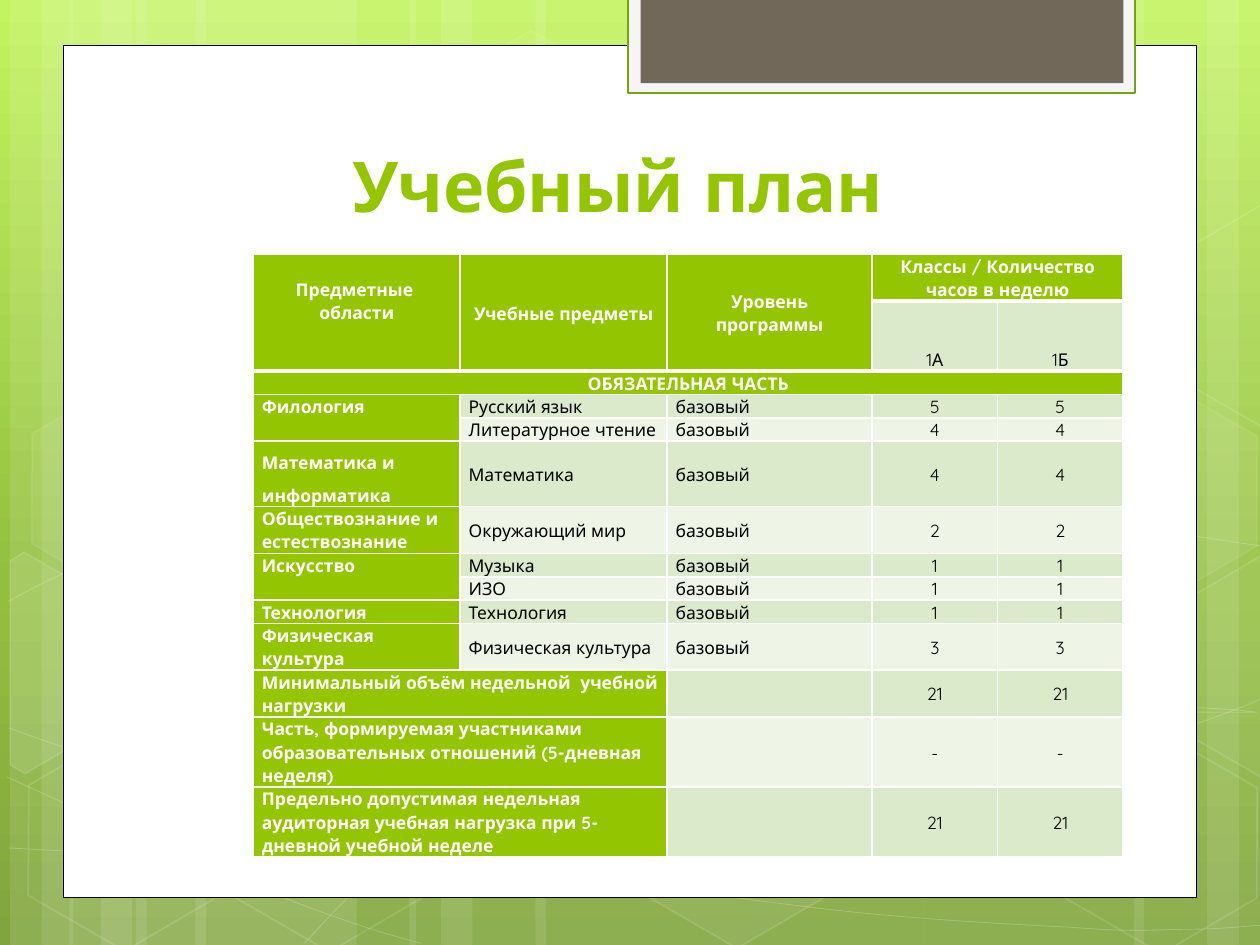
"""Build the curriculum slide: a green backdrop, a title and a table of weekly hours."""
import copy
import math

import lxml.etree
import pptx
import pptx.dml.color
import pptx.enum.shapes
import pptx.enum.text
import pptx.oxml.ns
import pptx.util

Pt = pptx.util.Pt
qn = pptx.oxml.ns.qn
RGB = pptx.dml.color.RGBColor.from_string
SHAPE = pptx.enum.shapes.MSO_SHAPE
ALIGN = pptx.enum.text.PP_ALIGN
ANCHOR = pptx.enum.text.MSO_ANCHOR

THEME = {
    "font": "Quicksand", "title_size": 40, "table_size": 10,
    "white": "FFFFFF", "black": "000000", "accent": "94C600",
    "bands": ["EEF5E7", "DCEACC"],
    "frame": "F5F5F5", "frame_line": "74A510", "tab": "71685A",
    "backdrop": [(0, "C3F35F"), (0.62, "93BF3F"), (1, "81A53E")],
}


def paint(shape, fill=None, fill_alpha=100, line=None, width=1, line_alpha=100):
    """Set fill and line, with opacity in percent."""
    shape.shadow.inherit = False
    for target, color, alpha in ((shape.fill, fill, fill_alpha), (shape.line.fill, line, line_alpha)):
        if color is None or alpha == 0:
            target.background()
            continue
        target.solid()
        target.fore_color.rgb = RGB(color)
        if alpha < 100:
            holder = shape.line._get_or_add_ln() if target is shape.line.fill else shape.element.spPr
            value = holder.find(qn("a:solidFill")).find(qn("a:srgbClr"))
            lxml.etree.SubElement(value, qn("a:alpha"), val=str(alpha * 1000))
    if line:
        shape.line.width = Pt(width)


def write(paragraph, text, alignment, spacing, size, color, bold):
    """Write one formatted run into a paragraph."""
    paragraph.alignment = alignment
    paragraph.line_spacing = spacing
    run = paragraph.add_run()
    run.text = text
    for name, value in {"name": THEME["font"], "size": Pt(size), "bold": bold}.items():
        setattr(run.font, name, value)
    run.font.color.rgb = RGB(color)


presentation = pptx.Presentation()
presentation.slide_width, presentation.slide_height = Pt(720), Pt(540)
slide = presentation.slides.add_slide(presentation.slide_layouts[5])
shapes = slide.shapes

background = slide.background.fill
background.gradient()
background.gradient_angle = 270
first_stop = background.gradient_stops[0]._gs
first_stop.addnext(copy.deepcopy(first_stop))
for stop, (position, color) in zip(background.gradient_stops, THEME["backdrop"]):
    stop.position = position
    stop.color.rgb = RGB(color)

stripes = [(77.8, 126), (5.8, 36), (23.8, 60), (111.6, 126), (39.6, 36), (57.6, 60),
           (527.8, 126), (689.8, 36), (648, 60), (306, 222), (234, 36), (252, 60)]
for left, width in stripes:
    stripe = shapes.add_shape(SHAPE.RECTANGLE, Pt(left), 0, Pt(width), Pt(540))
    paint(stripe, THEME["white"], 10)

curves = [
    [(5, 484.6), (44, 486.7), (83, 489), (137, 488), (191, 487.5), (258, 486), (330, 479),
     (402, 471.6), (504, 458), (570, 444), (636, 430.6), (703, 409), (725, 397)],
    [(5, 343.5), (26, 332), (47, 321), (87, 310), (129, 298), (186, 284), (250, 279),
     (314, 274), (392, 273), (471, 279), (550, 284), (682, 307), (725, 312.5)],
    [(4, 444), (91.5, 484), (178, 523.5), (240.5, 539)],
    [(5, 416), (27, 424), (50, 432), (92, 443.5), (134, 454), (197, 472), (257, 484.5),
     (317, 497), (392, 510), (452, 517), (512, 525), (576, 528), (614, 530),
     (652, 533), (662, 531), (680, 531), (699, 531), (712, 529), (725, 528.5)],
    [(174, 539), (187, 525), (200, 510), (217, 497.5), (235, 485), (259, 470), (279, 460),
     (299.5, 450), (312, 446), (338, 438.5), (364, 431), (412.5, 421), (438, 416),
     (464, 411), (467, 411), (490, 410), (512, 407.5), (547, 405), (572, 404.5),
     (597, 404), (638, 404.5), (638, 404.5), (654, 404.5), (670, 404.5), (686, 404.5),
     (699, 405), (711, 406), (718, 407), (724, 407.5)],
]
for curve in curves:
    points = [(Pt(x), Pt(y)) for x, y in curve]
    builder = shapes.build_freeform(*points[0])
    builder.add_line_segments(points[1:], close=False)
    shape = builder.convert_to_shape()
    segments = list(shape.element.iter(qn("a:lnTo")))
    for start in range(0, len(segments), 3):
        bezier = lxml.etree.Element(qn("a:cubicBezTo"))
        segments[start].addprevious(bezier)
        for segment in segments[start:start + 3]:
            bezier.append(segment[0])
            segment.getparent().remove(segment)
    paint(shape, line=THEME["white"], width=0.5, line_alpha=20)

hexagons = [(240.5, 26, 4, 8), (358, 424, 6, 12), (8, 425.5, 0, 12), (10, 224.5, 7, 8), (125, 426, 0, 12),
            (542.2, 326.2, 10, 12), (600.5, 427, 0, 12), (600.5, 226, 7, 8)]
for left, top, fill_alpha, line_alpha in hexagons:
    hexagon = shapes.add_shape(SHAPE.HEXAGON, Pt(left), Pt(top), Pt(126), Pt(109.4))
    hexagon.adjustments[0] = 0.285
    hexagon.rotation = 30
    paint(hexagon, THEME["white"], fill_alpha, THEME["white"], 1, line_alpha)

left_piece = [(5.8, 320.4), (13.7, 315.4), (69, 347), (68.4, 410.4), (14.4, 442), (5.8, 437)]
right_piece = [(666.7, 349.2), (720.7, 317.5), (726.5, 321.1), (726.5, 441.4), (721.4, 444.2), (666.7, 412.6)]
pieces = [(left_piece, 25.9, 385.2, 0, 10), (right_piece, 709.2, 374.4, 0, 4),
          (right_piece, 709.2, 374.4, -200.4, 0)]
cosine, sine = math.cos(math.radians(30)), math.sin(math.radians(30))
for corners, center_x, center_y, shift, fill_alpha in pieces:
    offsets = [(x - center_x, y - center_y) for x, y in corners]
    points = [(Pt(center_x + x * cosine + y * sine), Pt(center_y + shift - x * sine + y * cosine))
              for x, y in offsets]
    builder = shapes.build_freeform(*points[0])
    builder.add_line_segments(points[1:])
    piece = builder.convert_to_shape()
    piece.rotation = 30
    paint(piece, THEME["white"], fill_alpha, THEME["white"], 1, 12)

panels = [((36, 26, 648, 487), "white", "black", 0.5),
          ((359, -1.5, 289.6, 54.7), "frame", "frame_line", 1.25),
          ((366, -1.5, 276, 49), "tab", None, 0)]
for box, fill, line, width in panels:
    panel = shapes.add_shape(SHAPE.RECTANGLE, *map(Pt, box))
    paint(panel, THEME[fill], line=THEME.get(line), width=width)

title = shapes.title
title.element.getparent().append(title.element)
for name, value in {"left": 82, "top": 43.2, "width": 553, "height": 90}.items():
    setattr(title, name, Pt(value))
title.text_frame.vertical_anchor = ANCHOR.BOTTOM
write(title.text_frame.paragraphs[0], "Учебный план ", ALIGN.CENTER, 1,
      THEME["title_size"], THEME["accent"], True)

level = "базовый"
rows = [
    ["Предметные  области", "Учебные предметы", "Уровень программы", "Классы / Количество часов в неделю", ""],
    ["", "", "", "1А", "1Б"],
    ["ОБЯЗАТЕЛЬНАЯ ЧАСТЬ", "", "", "", ""],
    ["Филология", "Русский язык", level, "5", "5"],
    ["", "Литературное чтение", level, "4", "4"],
    ["Математика и информатика", "Математика", level, "4", "4"],
    ["Обществознание и естествознание", "Окружающий мир", level, "2", "2"],
    ["Искусство", "Музыка", level, "1", "1"],
    ["", "ИЗО", level, "1", "1"],
    ["Технология", "Технология", level, "1", "1"],
    ["Физическая культура", "Физическая культура", level, "3", "3"],
    ["Минимальный объём недельной  учебной нагрузки", "", "", "21", "21"],
    ["Часть, формируемая участниками образовательных отношений (5-дневная неделя)", "", "", "-", "-"],
    ["Предельно допустимая недельная аудиторная учебная нагрузка при 5-дневной учебной неделе",
     "", "", "21", "21"],
]
line_height = 13.33
line_counts = [2, 3, 1, 1, 1, 2.8, 2, 1, 1, 1, 2, 2, 3, 3]
column_widths = [118.2, 118.2, 117.2, 71.7, 71.7]
merges = [(0, 0, 1, 0), (0, 1, 1, 1), (0, 2, 1, 2), (0, 3, 0, 4), (2, 0, 2, 4), (3, 0, 4, 0),
          (7, 0, 8, 0), (11, 0, 11, 1), (12, 0, 12, 1), (13, 0, 13, 1)]
anchors = {(0, 1): ANCHOR.MIDDLE, (0, 2): ANCHOR.MIDDLE, (0, 3): ANCHOR.BOTTOM,
           (1, 3): ANCHOR.BOTTOM, (1, 4): ANCHOR.BOTTOM, (5, 0): ANCHOR.BOTTOM}

table = shapes.add_table(len(rows), len(column_widths), Pt(144.8), Pt(145.4), Pt(sum(column_widths)),
                         Pt(line_height * sum(line_counts))).table
for column, width in zip(table.columns, column_widths):
    column.width = Pt(width)
for row, count in zip(table.rows, line_counts):
    row.height = Pt(line_height * count)
for top, left, bottom, right in merges:
    table.cell(top, left).merge(table.cell(bottom, right))

for r, texts in enumerate(rows):
    for c, text in enumerate(texts):
        cell = table.cell(r, c)
        header = r in (0, 2) or c == 0 or (r == 1 and c < 3) or (r > 10 and c < 2)
        margin_top = line_height if (r, c) == (0, 0) else 0
        margins = {"margin_left": 4.9, "margin_right": 4.9, "margin_top": margin_top, "margin_bottom": 0}
        for name, value in margins.items():
            setattr(cell, name, Pt(value))
        cell.vertical_anchor = anchors.get((r, c), ANCHOR.TOP if header else ANCHOR.MIDDLE)
        cell.fill.solid()
        cell.fill.fore_color.rgb = RGB(THEME["accent"] if header else THEME["bands"][r % 2])
        thick_bottom = r == 0 or (r == 1 and c < 3)
        for index, side in enumerate("LRTB"):
            width = 3 if side == "B" and thick_bottom else 1
            border = lxml.etree.Element(qn("a:ln" + side), w=str(Pt(width)))
            border_fill = lxml.etree.SubElement(border, qn("a:solidFill"))
            lxml.etree.SubElement(border_fill, qn("a:srgbClr"), val=THEME["white"])
            cell._tc.tcPr.insert(index, border)
        if text:
            write(cell.text_frame.paragraphs[0], text, ALIGN.CENTER if r < 3 or c > 2 else ALIGN.LEFT,
                  1.5 if (r, c) == (5, 0) else 1.07, THEME["table_size"],
                  THEME["white"] if header else THEME["black"], header)

presentation.save("out.pptx")
